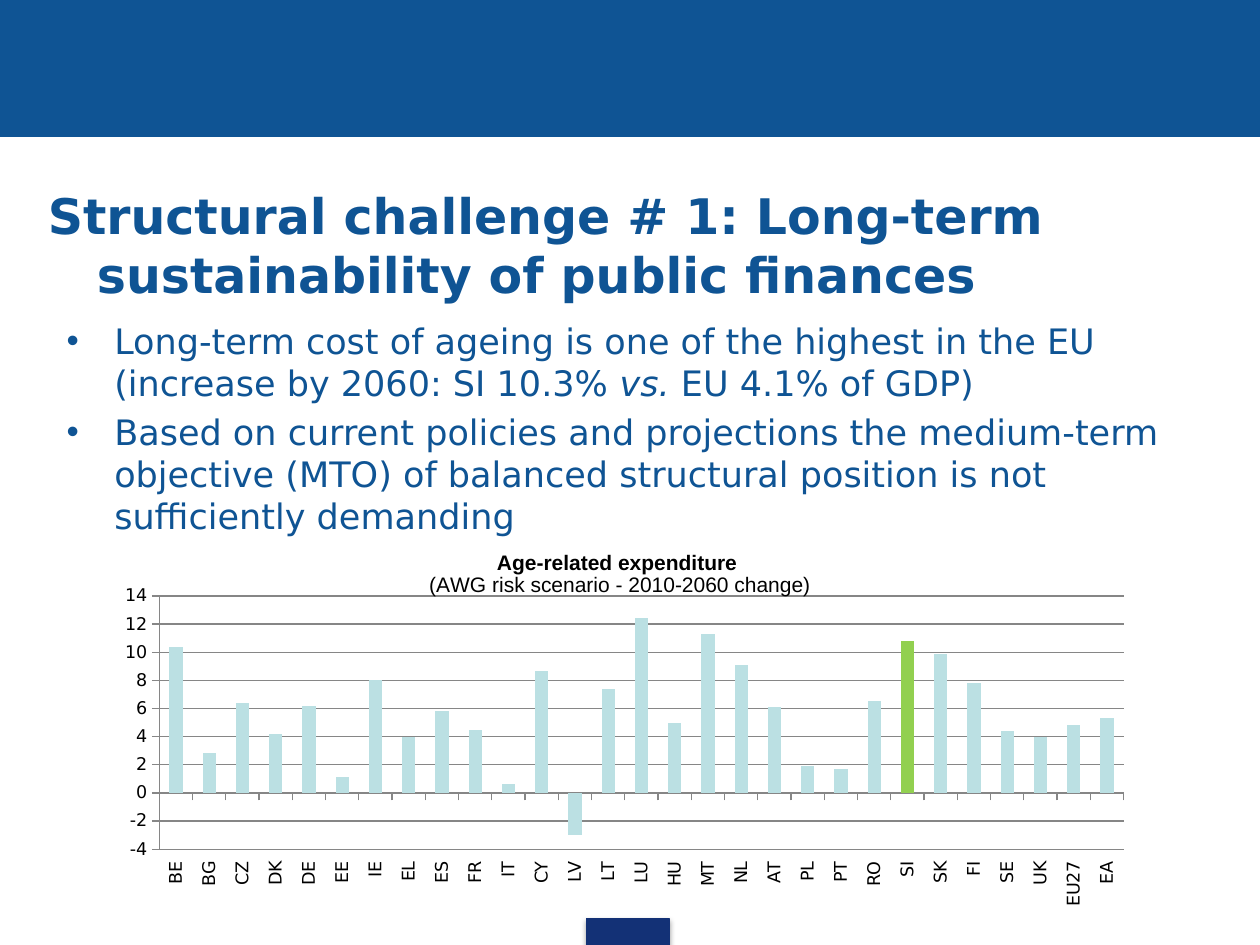
from lxml import etree
from pptx import Presentation
from pptx import util as u
from pptx.chart import data as chart_data
from pptx.dml.color import RGBColor
from pptx.enum import chart as charts, shapes, text
from pptx.oxml import parse_xml
from pptx.oxml.ns import nsdecls, qn

COLORS = {"blue": "0F5494", "navy": "133176", "bar": "BBE0E3",
          "slovenia": "92D050", "axis": "868686", "black": "000000"}
FONT = "DejaVu Sans"
EXPENDITURE = {
    "BE": 10.4, "BG": 2.8, "CZ": 6.4, "DK": 4.2, "DE": 6.2, "EE": 1.1, "IE": 8,
    "EL": 4, "ES": 5.8, "FR": 4.5, "IT": 0.6, "CY": 8.7, "LV": -3, "LT": 7.4,
    "LU": 12.4, "HU": 5, "MT": 11.3, "NL": 9.1, "AT": 6.1, "PL": 1.9, "PT": 1.7,
    "RO": 6.5, "SI": 10.8, "SK": 9.9, "FI": 7.8, "SE": 4.4, "UK": 4,
    "EU27": 4.8, "EA": 5.3,
}


def color(name):
    return RGBColor.from_string(COLORS[name])


def set_font(font, color_name, **values):
    for name, value in values.items():
        setattr(font, name, value)
    font.color.rgb = color(color_name)


presentation = Presentation()
presentation.slide_width, presentation.slide_height = u.Cm(25.4), u.Cm(19.05)
slide = presentation.slides.add_slide(presentation.slide_layouts[1])
title, body = slide.placeholders[0], slide.placeholders[1]

bands = []
for fill, box in (("blue", (0, 0, 25.4, 2.75)), ("navy", (11.83, 18.51, 1.66, 0.54))):
    shape = slide.shapes.add_shape(shapes.MSO_SHAPE.RECTANGLE, *map(u.Cm, box))
    shape.shadow.inherit = False
    shape.fill.solid()
    shape.fill.fore_color.rgb = color(fill)
    shape.line.color.rgb = color(fill)
    shape.line.width = u.Pt(0.75)
    title._element.addprevious(shape._element)
    bands.append(shape)
effects = bands[1]._element.spPr.find(qn("a:effectLst"))
effects.append(parse_xml(
    f'<a:outerShdw {nsdecls("a")} blurRad="39370" dist="22860" dir="5400000">'
    '<a:srgbClr val="000000"><a:alpha val="35000"/></a:srgbClr></a:outerShdw>'))

for shape, box, anchor in (
    (title, (0.71, 3.73, 24.2, 2.4), text.MSO_ANCHOR.MIDDLE),
    (body, (1.09, 6.32, 23.2, 12), text.MSO_ANCHOR.TOP),
):
    for name, length in zip(("left", "top", "width", "height"), box):
        setattr(shape, name, u.Cm(length))
    shape.text_frame.auto_size = text.MSO_AUTO_SIZE.NONE
    shape.text_frame.vertical_anchor = anchor

title.text_frame.text = "Structural challenge # 1: Long-term sustainability of public finances"
paragraph = title.text_frame.paragraphs[0]
paragraph.alignment = text.PP_ALIGN.LEFT
properties = paragraph._p.get_or_add_pPr()
properties.set("marL", str(u.Cm(0.99)))
properties.set("indent", str(u.Cm(-0.99)))
set_font(paragraph.runs[0].font, "blue", name=FONT, size=u.Pt(28), bold=True)

points = [
    [("Long-term cost of ageing is one of the highest in the EU "
      "(increase by 2060: SI 10.3% ", False), ("vs.", True), (" EU 4.1% of GDP)", False)],
    [("Based on current policies and projections the medium-term objective (MTO) "
      "of balanced structural position is not sufficiently demanding", False)],
]
for index, runs in enumerate(points):
    paragraph = body.text_frame.add_paragraph() if index else body.text_frame.paragraphs[0]
    paragraph.space_before = u.Pt(4 if index else 0)
    properties = paragraph._p.get_or_add_pPr()
    properties.set("marL", str(u.Cm(0.96)))
    properties.set("indent", str(u.Cm(-0.96)))
    bullet_color = etree.SubElement(properties, qn("a:buClr"))
    etree.SubElement(bullet_color, qn("a:srgbClr"), val=COLORS["blue"])
    etree.SubElement(properties, qn("a:buFont"), typeface="Arial")
    etree.SubElement(properties, qn("a:buChar"), char="•")
    for words, italic in runs:
        run = paragraph.add_run()
        run.text = words
        set_font(run.font, "blue", name=FONT, size=u.Pt(20), italic=italic)

data = chart_data.CategoryChartData()
data.categories = list(EXPENDITURE)
data.add_series("Series 1", list(EXPENDITURE.values()))
chart = slide.shapes.add_chart(
    charts.XL_CHART_TYPE.COLUMN_CLUSTERED,
    *map(u.Cm, (1.7, 10.72, 21.6, 7.62)), data).chart
chart.has_legend = False
set_font(chart.font, "black", name=FONT, size=u.Pt(10))

title_frame = chart.chart_title.text_frame
title_frame.text = "Age-related expenditure \n(AWG risk scenario - 2010-2060 change)"
for paragraph, bold in zip(title_frame.paragraphs, (True, False)):
    set_font(paragraph.runs[0].font, "black", name="Arial", size=u.Pt(12), bold=bold)

plot = chart.plots[0]
plot.vary_by_categories = False
plot.gap_width = 150
series = plot.series[0]
series.invert_if_negative = False
slovenia = series.points[list(EXPENDITURE).index("SI")]
for item, fill in ((series, "bar"), (slovenia, "slovenia")):
    item.format.fill.solid()
    item.format.fill.fore_color.rgb = color(fill)

category_axis, value_axis = chart.category_axis, chart.value_axis
value_axis.minimum_scale, value_axis.maximum_scale, value_axis.major_unit = -4, 14, 2
value_axis.has_major_gridlines = True
category_axis.tick_label_position = charts.XL_TICK_LABEL_POSITION.LOW
for axis in (category_axis, value_axis):
    axis.major_tick_mark = charts.XL_TICK_MARK.OUTSIDE
    set_font(axis.tick_labels.font, "black", name=FONT, size=u.Pt(10))
for item in (category_axis, value_axis, value_axis.major_gridlines):
    item.format.line.color.rgb = color("axis")
    item.format.line.width = u.Pt(0.75)
category_axis._element.find(qn("c:txPr")).find(qn("a:bodyPr")).set("rot", "-5400000")

plot_area = chart._chartSpace.find(".//" + qn("c:plotArea"))
for old_layout in plot_area.findall(qn("c:layout")):
    plot_area.remove(old_layout)
layout = etree.Element(qn("c:layout"))
manual = etree.SubElement(layout, qn("c:manualLayout"))
for tag, value in (("layoutTarget", "inner"), ("xMode", "edge"), ("yMode", "edge"),
                   ("x", "0.07"), ("y", "0.17"), ("w", "0.9"), ("h", "0.67")):
    etree.SubElement(manual, qn("c:" + tag), val=value)
plot_area.insert(0, layout)

presentation.save("out.pptx")
